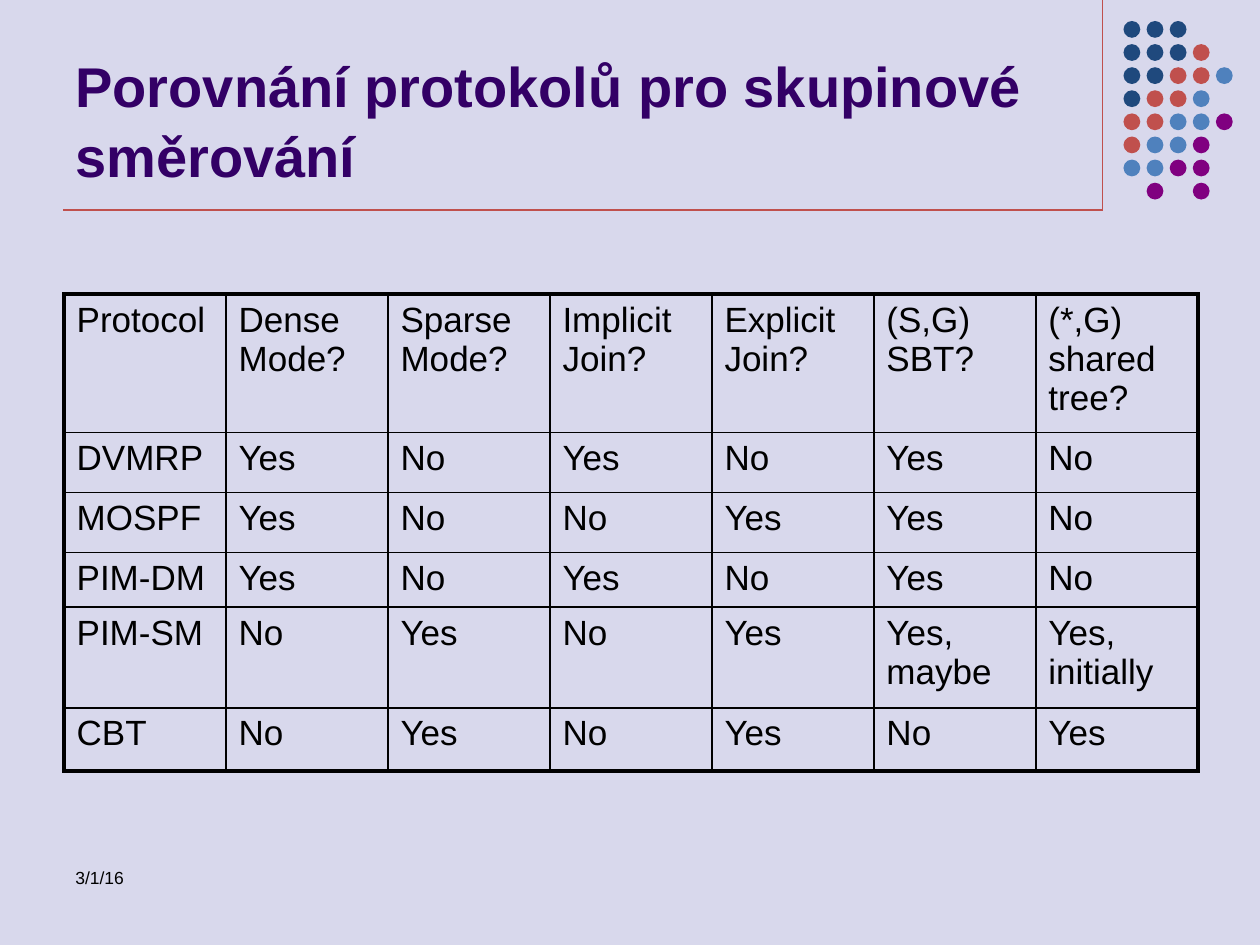
import pptx
import pptx.util
import pptx.dml.color
import pptx.enum.shapes
import pptx.enum.text
import pptx.oxml.ns
from lxml import etree

RGB = pptx.dml.color.RGBColor
PALE = RGB(0xD8, 0xD8, 0xEC)
NAVY = RGB(0x1F, 0x49, 0x7D)
RED = RGB(0xC0, 0x50, 0x4D)
BLUE = RGB(0x4F, 0x81, 0xBD)
PLUM = RGB(0x80, 0x00, 0x80)
INDIGO = RGB(0x33, 0x00, 0x66)
BLACK = RGB(0, 0, 0)

COLS, ROWS = 120, 90
DOTS = ["NNN", "NNNR", "NNRRB", "NRRB", "RRBBP", "RBBP", "BBPP", " P P"]
HUES = {"N": NAVY, "R": RED, "B": BLUE, "P": PLUM}
HIGH = [13.2, 5.7, 5.7, 5.2, 9.6, 6]
DATA = [
    ["Protocol", "Dense Mode?", "Sparse Mode?", "Implicit Join?",
     "Explicit Join?", "(S,G)\nSBT?", "(*,G) shared tree?"],
    ["DVMRP", "Yes", "No", "Yes", "No", "Yes", "No"],
    ["MOSPF", "Yes", "No", "No", "Yes", "Yes", "No"],
    ["PIM-DM", "Yes", "No", "Yes", "No", "Yes", "No"],
    ["PIM-SM", "No", "Yes", "No", "Yes", "Yes, maybe", "Yes, initially"],
    ["CBT", "No", "Yes", "No", "Yes", "No", "Yes"],
]


class Deck:
    """Holds the style and the current slide, measured on a 120 by 90 grid."""

    font = "Arial"
    thin, thick = 0.96, 2.21

    def __init__(self):
        self.prs = pptx.Presentation()
        self.prs.slide_width = pptx.util.Inches(10)
        self.prs.slide_height = pptx.util.Inches(7.5)
        self.slide = self.prs.slides.add_slide(self.prs.slide_layouts[6])
        self.shapes = self.slide.shapes
        fill = self.slide.background.fill
        fill.solid()
        fill.fore_color.rgb = PALE

    def wide(self, cols):
        return round(self.prs.slide_width * cols / COLS)

    def high(self, rows):
        return round(self.prs.slide_height * rows / ROWS)

    def box(self, x, y, w, h):
        return self.wide(x), self.high(y), self.wide(w), self.high(h)

    def style(self, frame, size, color, bold=False):
        for para in frame.paragraphs:
            for run in para.runs:
                run.font.name = self.font
                run.font.size = pptx.util.Pt(size)
                run.font.bold = bold
                run.font.color.rgb = color

    def line(self, x1, y1, x2, y2):
        kind = pptx.enum.shapes.MSO_CONNECTOR.STRAIGHT
        rule = self.shapes.add_connector(kind, *self.box(x1, y1, x2, y2))
        rule.line.color.rgb = RED
        rule.line.width = pptx.util.Pt(0.75)
        etree.SubElement(rule._element.spPr, pptx.oxml.ns.qn("a:effectLst"))

    def dot(self, x, y, size, color):
        kind = pptx.enum.shapes.MSO_SHAPE.OVAL
        dot = self.shapes.add_shape(kind, *self.box(x, y, size, size))
        dot.shadow.inherit = False
        dot.fill.solid()
        dot.fill.fore_color.rgb = color
        dot.line.fill.background()

    def text(self, words, x, y, w, h, size, color, bold=False, low=False, gap=1.0):
        frame = self.shapes.add_textbox(*self.box(x, y, w, h)).text_frame
        frame.word_wrap = True
        anchor = pptx.enum.text.MSO_ANCHOR
        frame.vertical_anchor = anchor.BOTTOM if low else anchor.TOP
        frame.text = words
        frame.paragraphs[0].line_spacing = gap
        self.style(frame, size, color, bold)

    def edge(self, cell, side, width):
        qn = pptx.oxml.ns.qn
        props = cell._tc.get_or_add_tcPr()
        line = etree.SubElement(props, qn("a:ln" + side), w=str(pptx.util.Pt(width)))
        fill = etree.SubElement(line, qn("a:solidFill"))
        etree.SubElement(fill, qn("a:srgbClr"), val=str(BLACK))

    def table(self, data, x, y, w, heights, size):
        rows, cols = len(data), len(data[0])
        area = self.box(x, y, w, sum(heights))
        grid = self.shapes.add_table(rows, cols, *area).table
        grid.first_row = grid.horz_banding = False
        for col in grid.columns:
            col.width = self.wide(w / cols)
        for r, (row, height) in enumerate(zip(data, heights)):
            grid.rows[r].height = self.high(height)
            for c, words in enumerate(row):
                cell = grid.cell(r, c)
                cell.text_frame.text = words
                self.style(cell.text_frame, size, BLACK)
                outer = {"L": c == 0, "R": c == cols - 1,
                         "T": r == 0, "B": r == rows - 1}
                for side, rim in outer.items():
                    self.edge(cell, side, self.thick if rim else self.thin)
                cell.fill.background()


def main():
    deck = Deck()
    deck.line(105, 0, 105, 20)
    for r, row in enumerate(DOTS):
        for c, key in enumerate(row):
            if key in HUES:
                deck.dot(107 + 2.2 * c, 2 + 2.2 * r, 1.6, HUES[key])
    deck.line(6, 20, 105, 20)
    deck.text("3/1/16", 6, 82, 28, 6, 10, BLACK)
    deck.text("Porovnání protokolů pro skupinové směrování",
              6, 1.6, 99, 17, 32, INDIGO, bold=True, low=True, gap=1.05)
    deck.table(DATA, 6.1, 28, 108, HIGH, 20)
    deck.prs.save("out.pptx")


if __name__ == "__main__":
    main()
